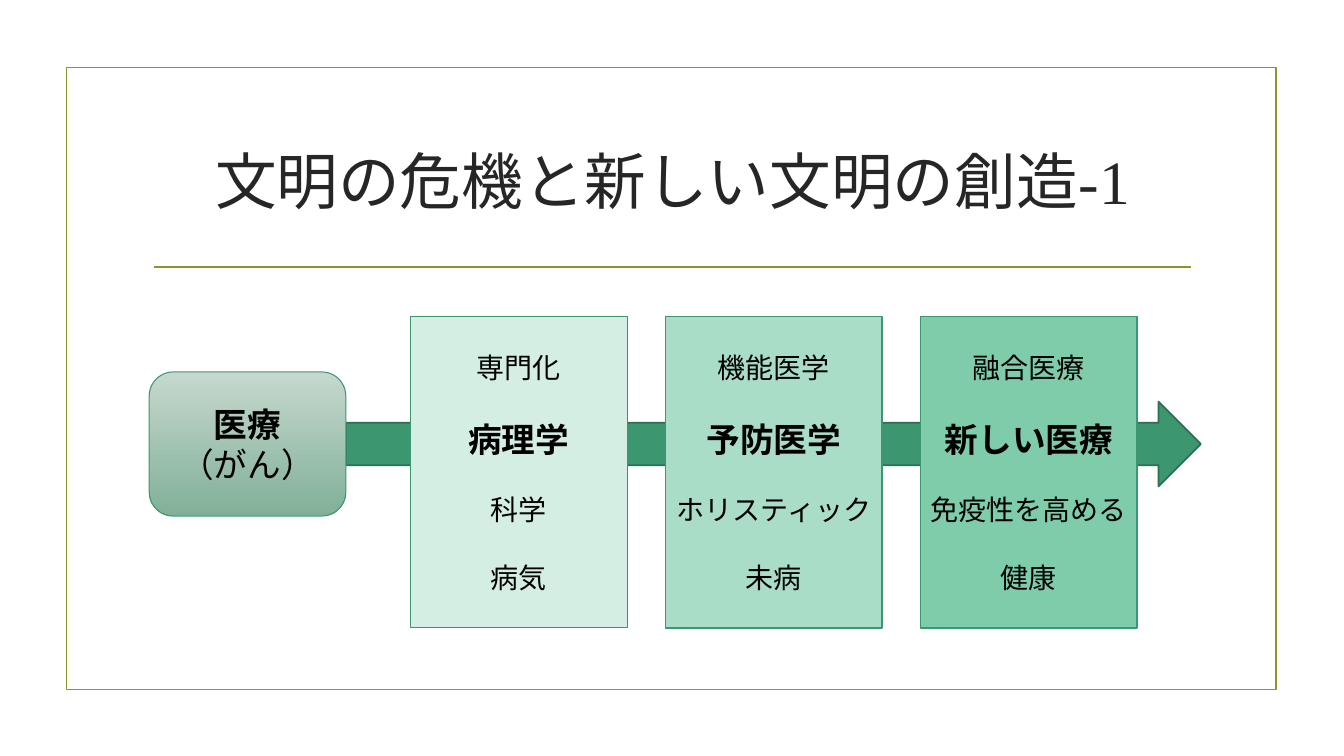
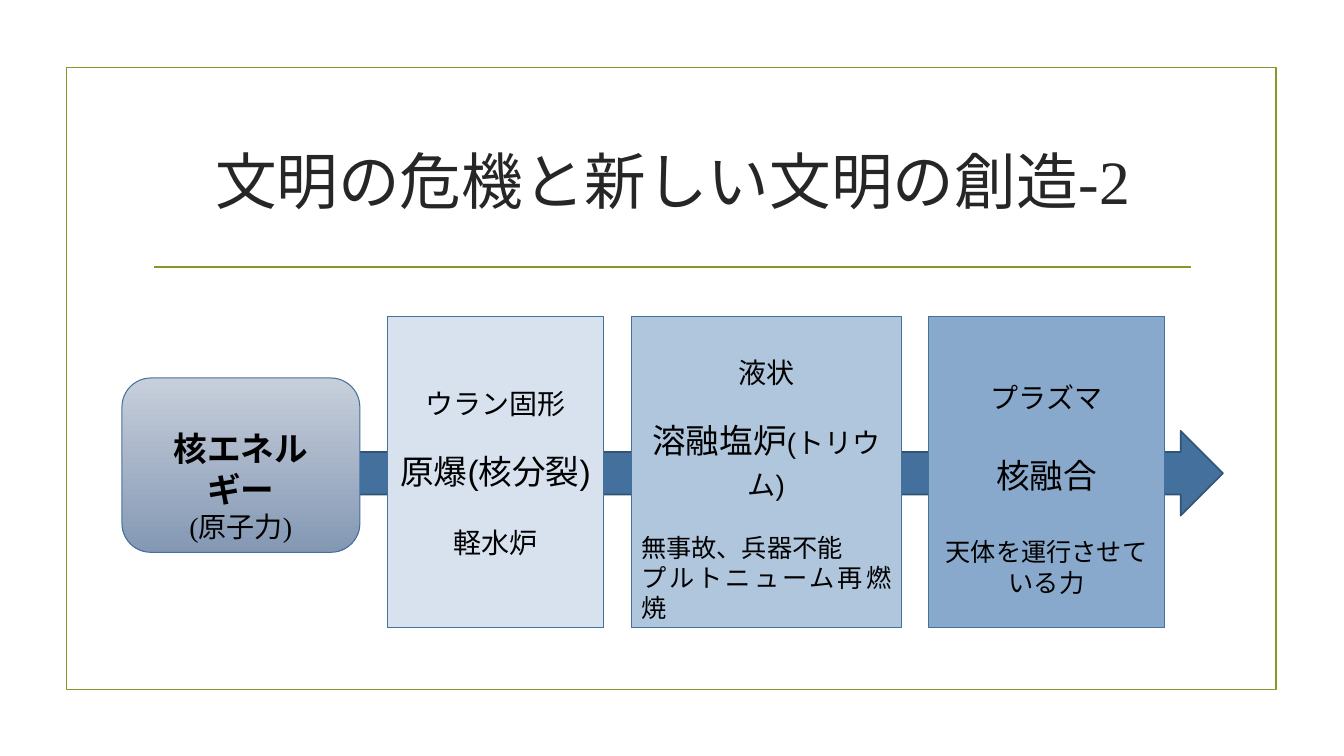
from dataclasses import dataclass

from pptx import Presentation
from pptx.dml.color import RGBColor
from pptx.enum.lang import MSO_LANGUAGE_ID
from pptx.enum.shapes import MSO_CONNECTOR, MSO_SHAPE
from pptx.enum.text import MSO_ANCHOR, MSO_AUTO_SIZE, PP_ALIGN
from pptx.oxml.ns import qn
from pptx.util import Inches, Pt

RECTANGLE = MSO_SHAPE.RECTANGLE
ROUNDED = MSO_SHAPE.ROUNDED_RECTANGLE
RIGHT_ARROW = MSO_SHAPE.RIGHT_ARROW
STRAIGHT = MSO_CONNECTOR.STRAIGHT
MIDDLE = MSO_ANCHOR.MIDDLE
NO_AUTOFIT = MSO_AUTO_SIZE.NONE
CENTER = PP_ALIGN.CENTER
JUSTIFY = PP_ALIGN.JUSTIFY
JAPANESE = MSO_LANGUAGE_ID.JAPANESE

SERIF = "Times New Roman"
SANS = "Arial"
COLORS = {
    "frame": "83992A",
    "title": "262626",
    "text": "000000",
    "green": "3C9770",
    "green_edge": "2C7053",
    "green_light": "C6D8CE",
    "green_deep": "81B098",
    "green_1": "D4EEE3",
    "green_2": "A9DDC7",
    "green_3": "7FCCAB",
    "blue": "44709D",
    "blue_edge": "325374",
    "blue_light": "C7CFDB",
    "blue_deep": "8498B4",
    "blue_1": "D7E2EE",
    "blue_2": "AFC6DD",
    "blue_3": "88A9CB",
}
LINE_FACTOR = 1.21
STAGE_TOP, STAGE_HEIGHT = 3.14, 3.09
ARROW_HEIGHT = 0.84


@dataclass(frozen=True)
class Line:
    text: str
    size: int = 20
    font: str = SERIF
    bold: bool = False
    gap: int = 0
    align: PP_ALIGN = CENTER
    tail: str = ""
    tail_size: int = 20


@dataclass(frozen=True)
class Box:
    left: float
    top: float
    width: float
    height: float


@dataclass(frozen=True)
class Stage:
    width: float
    lines: tuple[Line, ...]
    lead: float = 0
    border: float = 0.75


@dataclass(frozen=True)
class Flow:
    title: str
    hue: str
    arrow_left: float
    arrow_width: float
    topic: Box
    topic_lines: tuple[Line, ...]
    topic_lead: float
    first_left: float
    gap: float
    stages: tuple[Stage, ...]


def rgb(name: str) -> RGBColor:
    return RGBColor.from_string(COLORS[name])


def write(paragraph, text: str, *, size: int, font: str = SERIF,
          color: str = "text", bold: bool = False, align: PP_ALIGN = CENTER) -> None:
    paragraph.alignment = align
    run = paragraph.add_run()
    run.text = text
    run.font.size = Pt(size)
    run.font.name = font
    run.font.bold = bold
    run.font.color.rgb = rgb(color)
    run.font.language_id = JAPANESE


def write_lines(shape, lines: tuple[Line, ...], lead: float) -> None:
    frame = shape.text_frame
    frame.word_wrap = True
    frame.vertical_anchor = MIDDLE
    frame.margin_left = frame.margin_right = Inches(0.1)
    frame.margin_top = Inches(lead)
    frame.margin_bottom = 0
    for index, line in enumerate(lines):
        paragraph = frame.add_paragraph() if index else frame.paragraphs[0]
        paragraph.line_spacing = Pt(line.size * LINE_FACTOR)
        paragraph.space_before = Pt(line.gap)
        write(paragraph, line.text, size=line.size, font=line.font,
              bold=line.bold, align=line.align)
        if line.tail:
            write(paragraph, line.tail, size=line.tail_size, font=line.font,
                  align=line.align)


def add_box(slide, kind: MSO_SHAPE, box: Box, *, fill: tuple[str, ...] = (),
            line: str, width: float = 1.25):
    shape = slide.shapes.add_shape(kind, Inches(box.left), Inches(box.top),
                                   Inches(box.width), Inches(box.height))
    shape.shadow.inherit = False
    shape.line.color.rgb = rgb(line)
    shape.line.width = Pt(width)
    if len(fill) == 2:
        shape.fill.gradient()
        shape.fill.gradient_angle = 270
        for stop, position, name in zip(shape.fill.gradient_stops, (0, 1), fill):
            stop.position = position
            stop.color.rgb = rgb(name)
    elif fill:
        shape.fill.solid()
        shape.fill.fore_color.rgb = rgb(fill[0])
    else:
        shape.fill.background()
    return shape


def add_page(deck, title: str):
    slide = deck.slides.add_slide(deck.slide_layouts[5])
    heading = slide.shapes.title
    heading.left, heading.top = Inches(1.42), Inches(1.07)
    heading.width, heading.height = Inches(10.5), Inches(1.43)
    heading.text_frame.auto_size = NO_AUTOFIT
    heading.text_frame.vertical_anchor = MIDDLE
    write(heading.text_frame.paragraphs[0], title, size=44, color="title")
    add_box(slide, RECTANGLE, Box(0.66, 0.67, 12, 6.17), line="frame")
    rule = slide.shapes.add_connector(STRAIGHT, Inches(1.53), Inches(2.65),
                                      Inches(11.81), Inches(2.65))
    rule.line.color.rgb = rgb("frame")
    rule.line.width = Pt(1.25)
    properties = rule._element.spPr
    properties.append(properties.makeelement(qn("a:effectLst"), {}))
    return slide


def draw_flow(deck, flow: Flow) -> None:
    slide = add_page(deck, flow.title)
    hue, topic = flow.hue, flow.topic
    arrow_top = topic.top + (topic.height - ARROW_HEIGHT) / 2 + flow.topic_lead / 5
    add_box(slide, RIGHT_ARROW,
            Box(flow.arrow_left, arrow_top, flow.arrow_width, ARROW_HEIGHT),
            fill=(hue,), line=f"{hue}_edge")
    origin = add_box(slide, ROUNDED, topic, fill=(f"{hue}_light", f"{hue}_deep"),
                     line=hue, width=0.75)
    write_lines(origin, flow.topic_lines, flow.topic_lead)
    left = flow.first_left
    for number, stage in enumerate(flow.stages, 1):
        card = add_box(slide, RECTANGLE,
                       Box(left, STAGE_TOP, stage.width, STAGE_HEIGHT),
                       fill=(f"{hue}_{number}",), line=hue, width=stage.border)
        write_lines(card, stage.lines, stage.lead)
        left += stage.width + flow.gap


def medical_stage(field: str, name: str, method: str, target: str,
                  border: float = 1.25) -> Stage:
    return Stage(2.15, (Line(field), Line(name, 24, SANS, True, 24),
                        Line(method, gap=24), Line(target, gap=24)), border=border)


FLOWS = (
    Flow(
        "文明の危機と新しい文明の創造-1", "green", 3.43, 8.48,
        Box(1.48, 3.69, 1.95, 1.43),
        (Line("医療", 24, SANS, True), Line("（がん）", 24)), 0, 4.07, 0.38,
        (
            medical_stage("専門化", "病理学", "科学", "病気", 0.75),
            medical_stage("機能医学", "予防医学", "ホリスティック", "未病"),
            medical_stage("融合医療", "新しい医療", "免疫性を高める", "健康"),
        ),
    ),
    Flow(
        "文明の危機と新しい文明の創造-2", "blue", 3.51, 8.62,
        Box(1.21, 3.75, 2.36, 1.73),
        (Line("核エネルギー", 24, SANS, True), Line("(原子力)")), 0.4, 3.84, 0.27,
        (
            Stage(2.15, (Line("ウラン固形"),
                         Line("原爆(核分裂)", 24, SANS, gap=22),
                         Line("軽水炉", gap=24))),
            Stage(2.68, (Line("液状"),
                         Line("溶融塩炉", 24, SANS, gap=22, tail="(トリウム)"),
                         Line("無事故、兵器不能", 18, gap=22, align=JUSTIFY),
                         Line("プルトニューム再燃焼", 18, align=JUSTIFY)), 0.33),
            Stage(2.34, (Line("プラズマ", font=SANS),
                         Line("核融合", 24, SANS, gap=29),
                         Line("天体を運行させて", 18, gap=29),
                         Line("いる力", 18)), 0.33),
        ),
    ),
)


def main() -> None:
    deck = Presentation()
    deck.slide_width, deck.slide_height = Inches(13.33), Inches(7.5)
    for flow in FLOWS:
        draw_flow(deck, flow)
    deck.save("out.pptx")


if __name__ == "__main__":
    main()
